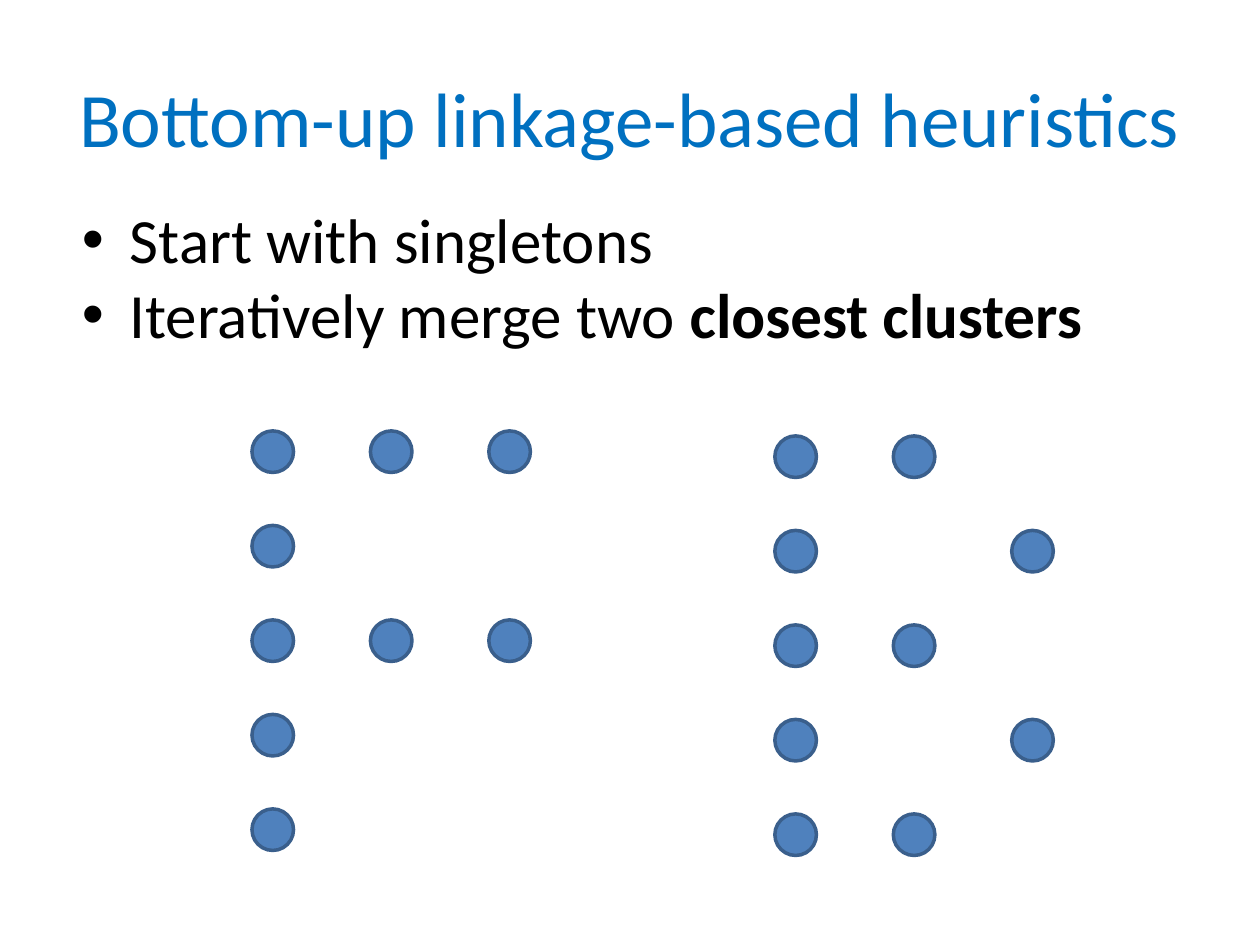
from lxml import etree
from pptx import Presentation
from pptx import util as u
from pptx.dml.color import RGBColor
from pptx.enum import shapes, text
from pptx.oxml import ns

COLORS = {"title": "0070C0", "body": "000000", "dot": "4F81BD", "outline": "3A5F8C"}


def add_text(para, words, size=36, color="body", bold=False):
    span = para.add_run()
    span.text = words
    span.font.name = "Calibri"
    span.font.size = u.Pt(size)
    span.font.bold = bold
    span.font.color.rgb = RGBColor.from_string(COLORS[color])


deck = Presentation()
deck.slide_width, deck.slide_height = u.Inches(10), u.Inches(7.5)
page = deck.slides.add_slide(deck.slide_layouts[1])

title = page.shapes.title
title.left, title.top = u.Inches(0.5), u.Inches(0.3)
title.width, title.height = u.Inches(9), u.Inches(1.25)
title.text_frame.vertical_anchor = text.MSO_ANCHOR.MIDDLE
heading = title.text_frame.paragraphs[0]
heading.alignment = text.PP_ALIGN.CENTER
add_text(heading, "Bottom-up linkage-based heuristics", size=44, color="title")

body = page.placeholders[1]
body.left, body.top = u.Inches(0.55), u.Inches(1.54)
body.width, body.height = u.Inches(9.08), u.Inches(1.31)
frame = body.text_frame
frame.auto_size = text.MSO_AUTO_SIZE.SHAPE_TO_FIT_TEXT
bullets = [
    [("Start with singletons", False)],
    [("Iteratively merge two ", False), ("closest clusters", True)],
]
for index, parts in enumerate(bullets):
    para = frame.add_paragraph() if index else frame.paragraphs[0]
    properties = para._p.get_or_add_pPr()
    properties.set("marL", str(u.Inches(0.38)))
    properties.set("indent", str(-u.Inches(0.38)))
    etree.SubElement(properties, ns.qn("a:buFont"), typeface="Arial")
    etree.SubElement(properties, ns.qn("a:buChar"), char="•")
    para.space_before = u.Pt(0)
    for words, bold in parts:
        add_text(para, words, bold=bold)

column_step, row_step, diameter = 0.94, 0.75, 0.33
clusters = [
    (2, 3.42, ["ooo", "o..", "ooo", "o..", "o.."]),
    (6.15, 3.46, ["oo.", "o.o", "oo.", "o.o", "oo."]),
]
for left, top, pattern in clusters:
    cluster = page.shapes.add_group_shape()
    for row, marks in enumerate(pattern):
        for column, mark in enumerate(marks):
            if mark != "o":
                continue
            dot = cluster.shapes.add_shape(
                shapes.MSO_SHAPE.OVAL,
                u.Inches(left + column * column_step),
                u.Inches(top + row * row_step),
                u.Inches(diameter),
                u.Inches(diameter),
            )
            dot.shadow.inherit = False
            dot.fill.solid()
            dot.fill.fore_color.rgb = RGBColor.from_string(COLORS["dot"])
            dot.line.color.rgb = RGBColor.from_string(COLORS["outline"])
            dot.line.width = u.Pt(2)

deck.save("out.pptx")
